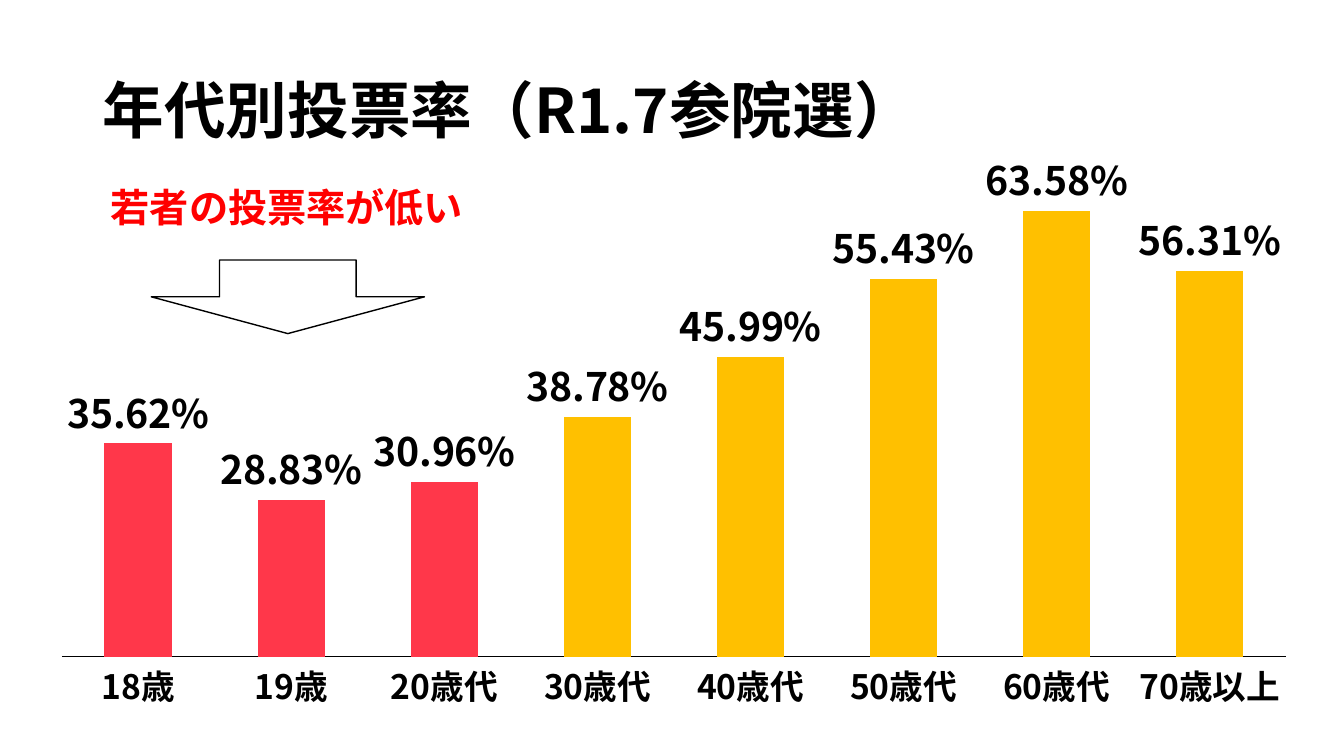
from dataclasses import dataclass

import lxml.etree
import pptx
import pptx.chart.data
import pptx.dml.color
import pptx.enum.chart
import pptx.enum.shapes
import pptx.enum.text
import pptx.oxml
import pptx.oxml.ns
import pptx.util

Inches = pptx.util.Inches
Pt = pptx.util.Pt
qn = pptx.oxml.ns.qn


@dataclass(frozen=True)
class Theme:
    font: str = "Noto Sans CJK JP"
    ink: str = "000000"
    alert: str = "FF0000"
    youth_bar: str = "FF374A"
    adult_bar: str = "FFC000"
    title_size: int = 44
    callout_size: int = 28
    label_size: int = 28
    category_size: int = 24


THEME = Theme()
YOUTH_COUNT = 3
TURNOUT = {
    "18歳": 0.3562,
    "19歳": 0.2883,
    "20歳代": 0.3096,
    "30歳代": 0.3878,
    "40歳代": 0.4599,
    "50歳代": 0.5543,
    "60歳代": 0.6358,
    "70歳以上": 0.5631,
}


def rgb(color):
    return pptx.dml.color.RGBColor.from_string(color)


def style_font(font, size, color=THEME.ink):
    """Set a bold font for Latin and East Asian characters alike."""
    font.size = Pt(size)
    font.bold = True
    font.color.rgb = rgb(color)
    font.name = THEME.font
    latin = font._element.find(qn("a:latin")) if hasattr(font, "_element") else font._rPr.find(qn("a:latin"))
    east_asian = lxml.etree.Element(qn("a:ea"), typeface=THEME.font)
    latin.addnext(east_asian)


def add_text(page, box, text, size, color=THEME.ink, anchor="TOP", line_spacing=1.0):
    frame = page.shapes.add_textbox(*map(Inches, box)).text_frame
    frame.word_wrap = True
    frame.vertical_anchor = getattr(pptx.enum.text.MSO_ANCHOR, anchor)
    para = frame.paragraphs[0]
    para.line_spacing = line_spacing
    span = para.add_run()
    span.text = text
    style_font(span.font, size, color)


def fix_plot_area(chart, **fractions):
    """Pin the inner plot area to fractions of the chart's box."""
    plot_area = chart._chartSpace.chart.plotArea
    for previous in plot_area.findall(qn("c:layout")):
        plot_area.remove(previous)
    layout = lxml.etree.Element(qn("c:layout"))
    manual = lxml.etree.SubElement(layout, qn("c:manualLayout"))
    settings = {"layoutTarget": "inner", "xMode": "edge", "yMode": "edge", **fractions}
    for name, value in settings.items():
        lxml.etree.SubElement(manual, qn(f"c:{name}"), val=str(value))
    plot_area.insert(0, layout)


def add_turnout_chart(page, box):
    kinds = pptx.enum.chart
    data = pptx.chart.data.CategoryChartData(number_format="0.00%")
    data.categories = list(TURNOUT)
    data.add_series("投票率", list(TURNOUT.values()))
    chart = page.shapes.add_chart(
        kinds.XL_CHART_TYPE.COLUMN_CLUSTERED, *map(Inches, box), data
    ).chart
    chart.has_legend = False
    chart.has_title = False
    fix_plot_area(chart, x=0.02, y=0.02, w=0.96, h=0.87)

    values = chart.value_axis
    values.minimum_scale = 0.1
    values.maximum_scale = 0.7
    values.has_major_gridlines = False
    values.visible = False

    ages = chart.category_axis
    ages.major_tick_mark = kinds.XL_TICK_MARK.NONE
    ages.format.line.color.rgb = rgb(THEME.ink)
    ages.format.line.width = Pt(0.75)
    style_font(ages.tick_labels.font, THEME.category_size)

    plot = chart.plots[0]
    plot.vary_by_categories = False
    plot.gap_width = 126
    plot.overlap = -29
    plot.has_data_labels = True
    labels = plot.data_labels
    labels.show_value = True
    labels.number_format = "0.00%"
    labels.number_format_is_linked = False
    labels.position = kinds.XL_LABEL_POSITION.OUTSIDE_END
    style_font(labels.font, THEME.label_size)

    for index in range(len(TURNOUT)):
        fill = plot.series[0].points[index].format.fill
        fill.solid()
        fill.fore_color.rgb = rgb(THEME.youth_bar if index < YOUTH_COUNT else THEME.adult_bar)


def add_youth_callout(page, box):
    """Place the remark with an arrow below it, pointing at the youth bars."""
    left, top, width, height = box
    add_text(page, (left, top, width, 0.57), "若者の投票率が低い", THEME.callout_size, THEME.alert)
    arrow_height = 0.73
    arrow = page.shapes.add_shape(
        pptx.enum.shapes.MSO_SHAPE.DOWN_ARROW,
        *map(Inches, (left + 0.5, top + height - arrow_height, width - 1, arrow_height)),
    )
    arrow.shadow.inherit = False
    arrow.fill.background()
    arrow.line.color.rgb = rgb(THEME.ink)
    arrow.line.width = Pt(1)


def add_turnout_page(deck):
    page = deck.slides.add_slide(deck.slide_layouts[6])
    add_text(page, (0.92, 0.4, 11.5, 1.45), "年代別投票率（R1.7参院選）",
             THEME.title_size, anchor="MIDDLE", line_spacing=0.9)
    add_turnout_chart(page, (0.36, 1.45, 12.65, 5.69))
    add_youth_callout(page, (1, 1.77, 3.71, 1.54))


def main():
    deck = pptx.Presentation()
    deck.slide_width = Inches(13.33)
    deck.slide_height = Inches(7.5)
    add_turnout_page(deck)
    deck.save("out.pptx")


if __name__ == "__main__":
    main()
